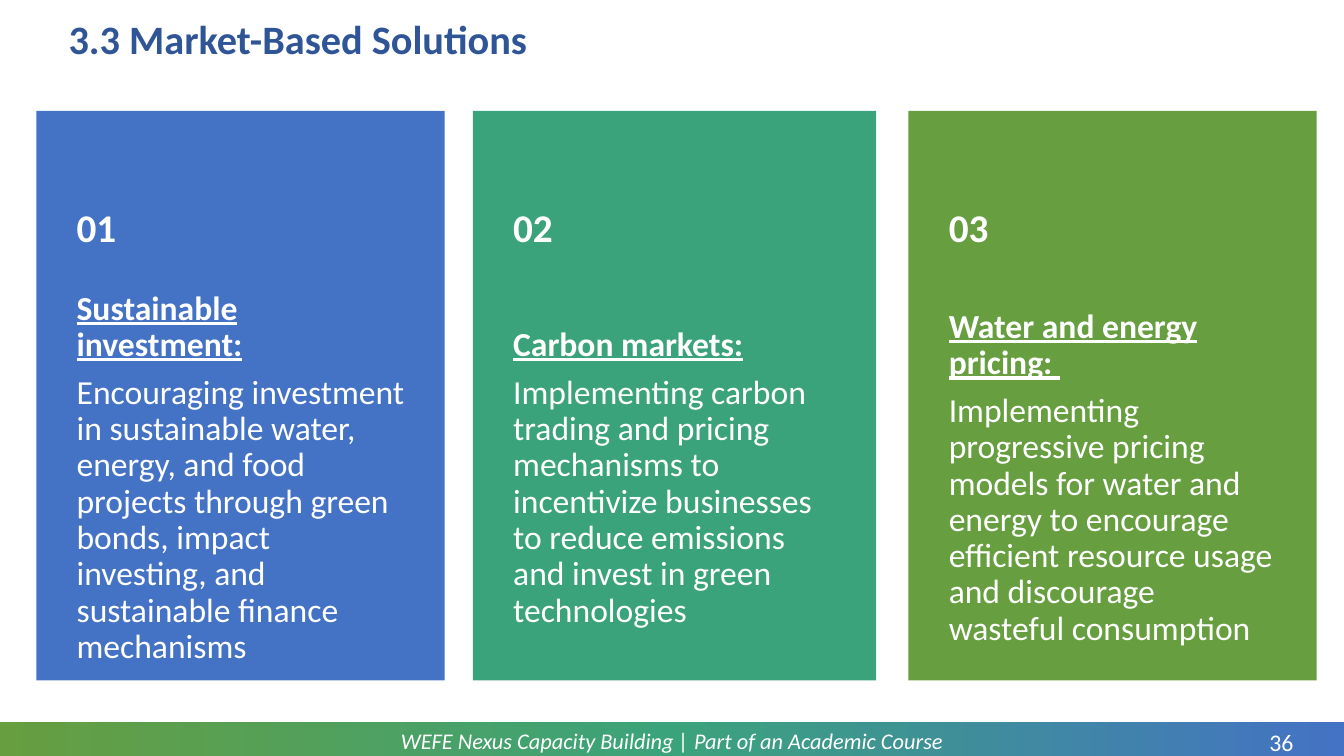
import copy

import pptx
import pptx.dml.color
import pptx.enum.shapes
import pptx.enum.text
import pptx.oxml.ns
import pptx.util

Inches = pptx.util.Inches
Pt = pptx.util.Pt
ALIGN = pptx.enum.text.PP_ALIGN

COLORS = {
    "blue": "4472C4",
    "teal": "3BA37B",
    "green": "669E40",
    "title": "2F5597",
    "white": "FFFFFF",
}


def rgb(name):
    return pptx.dml.color.RGBColor.from_string(COLORS[name])


class SlideBuilder:
    """Holds the text style and the current slide."""

    font_name = "Calibri"

    def __init__(self, page):
        self.page = page

    def fill_text(self, box, lines, insets=(0.1, 0.05, 0.1, 0.05), color="white", **para_format):
        """Fill a box with (text, font format) lines."""
        frame = box.text_frame
        frame_format = {
            "word_wrap": True,
            "auto_size": pptx.enum.text.MSO_AUTO_SIZE.NONE,
            "vertical_anchor": pptx.enum.text.MSO_ANCHOR.MIDDLE,
        }
        for side, inset in zip(("left", "top", "right", "bottom"), insets):
            frame_format[f"margin_{side}"] = Inches(inset)
        for name, value in frame_format.items():
            setattr(frame, name, value)
        for index, (text, font_format) in enumerate(lines):
            para = frame.add_paragraph() if index else frame.paragraphs[0]
            for name, value in ({"alignment": ALIGN.LEFT} | para_format).items():
                setattr(para, name, value)
            span = para.add_run()
            span.text = text
            for name, value in ({"name": self.font_name} | font_format).items():
                setattr(span.font, name, value)
            span.font.color.rgb = rgb(color)

    def title(self, text, area):
        box = self.page.shapes.title
        box.left, box.top, box.width, box.height = map(Inches, area)
        self.fill_text(box, [(text, {"size": Pt(28.8), "bold": True})],
                       color="title", line_spacing=0.9)

    def text(self, area, lines, **options):
        box = self.page.shapes.add_textbox(*map(Inches, area))
        self.fill_text(box, lines, **options)

    def rectangle(self, area):
        box = self.page.shapes.add_shape(
            pptx.enum.shapes.MSO_SHAPE.RECTANGLE, *map(Inches, area))
        box.shadow.inherit = False
        box.line.fill.background()
        return box

    def gradient_bar(self, area, colors):
        bar = self.rectangle(area)
        bar.fill.gradient()
        bar.fill.gradient_angle = 0
        # The default gradient has two stops, so add the missing ones
        stop_list = bar.element.find(".//" + pptx.oxml.ns.qn("a:gsLst"))
        while len(stop_list) < len(colors):
            stop_list.append(copy.deepcopy(stop_list[0]))
        for index, (stop, color) in enumerate(zip(bar.fill.gradient_stops, colors)):
            stop.position = index / (len(colors) - 1)
            stop.color.rgb = rgb(color)

    def card(self, left, width, color, number, heading, body):
        spacing = {"line_spacing": 0.9, "space_after": Pt(8.4)}
        box = self.rectangle((left, 1.1, width, 5.65))
        box.fill.solid()
        box.fill.fore_color.rgb = rgb(color)
        self.fill_text(box, [
            (heading, {"size": Pt(24), "bold": True, "underline": True}),
            (body, {"size": Pt(24)}),
        ], insets=(0.4, 2, 0.4, 0.36), **spacing)
        self.text((left, 1.53, width, 1.5),
                  [(f"{number:02}", {"size": Pt(28), "bold": True})],
                  insets=(0.4, 0.18, 0.4, 0.18), **spacing)


CARDS = [
    (0.36, 4.05, "blue", "Sustainable investment:",
     "Encouraging investment in sustainable water, energy, and food projects through "
     "green bonds, impact investing, and sustainable finance mechanisms"),
    (4.69, 4, "teal", "Carbon markets:",
     "Implementing carbon trading and pricing mechanisms to incentivize businesses "
     "to reduce emissions and invest in green technologies"),
    (9.01, 4.05, "green", "Water and energy pricing: ",
     "Implementing progressive pricing models for water and energy to encourage "
     "efficient resource usage and discourage wasteful consumption"),
]


def main():
    deck = pptx.Presentation()
    deck.slide_width, deck.slide_height = Inches(13.33), Inches(7.5)
    builder = SlideBuilder(deck.slides.add_slide(deck.slide_layouts[5]))

    # Footer bar with course name and page number
    builder.gradient_bar((0, 7.16, 13.33, 0.38), ("green", "teal", "blue"))
    builder.text((0.92, 7.17, 11.49, 0.36),
                 [("WEFE Nexus Capacity Building | Part of an Academic Course",
                   {"size": Pt(16), "italic": True})], alignment=ALIGN.CENTER)
    builder.text((12.41, 7.22, 0.6, 0.29), [("36", {"size": Pt(17)})],
                 insets=(0, 0, 0, 0), alignment=ALIGN.CENTER)

    # Title
    builder.title("3.3 Market-Based Solutions", (0.58, 0.13, 12.15, 0.56))

    # Numbered solution cards
    for number, (left, width, color, heading, body) in enumerate(CARDS, 1):
        builder.card(left, width, color, number, heading, body)

    deck.save("out.pptx")


if __name__ == "__main__":
    main()
